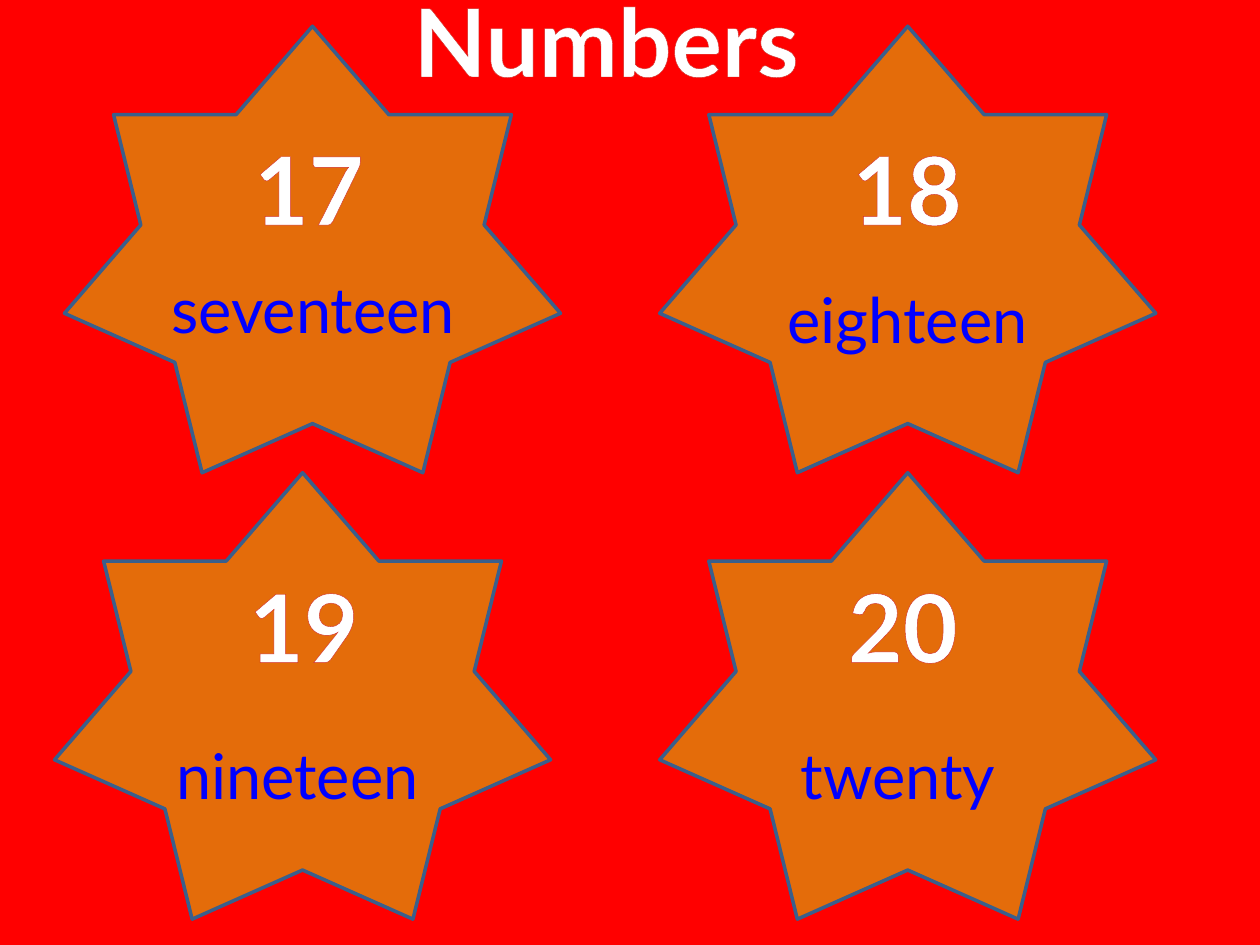
from dataclasses import dataclass

from lxml.etree import SubElement
from pptx import Presentation
from pptx.dml.color import RGBColor
from pptx.enum.shapes import MSO_SHAPE
from pptx.enum.text import MSO_ANCHOR, MSO_AUTO_SIZE, PP_ALIGN
from pptx.oxml.ns import qn
from pptx.shapes.autoshape import Shape
from pptx.slide import Slide
from pptx.util import Cm, Pt

RED = RGBColor(0xFF, 0x00, 0x00)
ORANGE = RGBColor(0xE4, 0x6C, 0x0A)
STEEL = RGBColor(0x3A, 0x5F, 0x8C)
WHITE = RGBColor(0xFF, 0xFF, 0xFF)
BLUE = RGBColor(0x00, 0x00, 0xFF)
BRICK = RGBColor(0xD0, 0x2F, 0x2A)

FONT = "Lato"
STAR_WIDTH, STAR_HEIGHT = 10, 9
HEADING_HEIGHT, WORD_HEIGHT = 2.57, 1.8


@dataclass(frozen=True)
class Area:
    """Position and size in centimetres."""
    left: float
    top: float
    width: float
    height: float

    def lengths(self) -> tuple[Cm, Cm, Cm, Cm]:
        return Cm(self.left), Cm(self.top), Cm(self.width), Cm(self.height)


@dataclass(frozen=True)
class NumberStar:
    left: float
    top: float
    figure: str
    figure_area: Area
    word: str
    word_area: Area


UPPER, LOWER = 0.53, 9.53
STARS = [
    NumberStar(1.3, UPPER, "17", Area(4.75, 2.51, 2.95, HEADING_HEIGHT),
               "seventeen", Area(2.11, 5.33, 8.41, WORD_HEIGHT)),
    NumberStar(13.3, UPPER, "18", Area(16.76, 2.51, 3.05, HEADING_HEIGHT),
               "eighteen", Area(14.5, 5.54, 7.59, WORD_HEIGHT)),
    NumberStar(1.1, LOWER, "19", Area(4.6, 11.33, 3.05, HEADING_HEIGHT),
               "nineteen", Area(2.49, 14.73, 7.01, WORD_HEIGHT)),
    NumberStar(13.3, LOWER, "20", Area(16.41, 11.33, 3.58, HEADING_HEIGHT),
               "twenty", Area(14.1, 14.73, 8, WORD_HEIGHT)),
]


def write_text(box: Shape, text: str, size: float, colour: RGBColor,
               bold: bool, wrap: bool) -> None:
    frame = box.text_frame
    frame.text = text
    frame.word_wrap = wrap
    frame.auto_size = MSO_AUTO_SIZE.SHAPE_TO_FIT_TEXT
    frame.vertical_anchor = MSO_ANCHOR.TOP
    para = frame.paragraphs[0]
    para.alignment = PP_ALIGN.CENTER
    font = para.runs[0].font
    font.name, font.size, font.bold = FONT, Pt(size), bold
    font.color.rgb = colour


def write_heading(box: Shape, text: str) -> None:
    """Large white text with a thin brick-red outline."""
    write_text(box, text, 54, WHITE, bold=True, wrap=False)
    span = box.text_frame.paragraphs[0].runs[0]
    properties = span.font._element
    outline = SubElement(properties, qn("a:ln"), w=str(Pt(1.93)))
    fill = SubElement(outline, qn("a:solidFill"))
    SubElement(fill, qn("a:srgbClr"), val=str(BRICK))
    properties.insert(0, outline)  # the outline comes before the fill


def draw_star(page: Slide, star: NumberStar) -> None:
    area = Area(star.left, star.top, STAR_WIDTH, STAR_HEIGHT)
    shape = page.shapes.add_shape(MSO_SHAPE.STAR_7_POINT, *area.lengths())
    shape.shadow.inherit = False
    shape.fill.solid()
    shape.fill.fore_color.rgb = ORANGE
    shape.line.color.rgb = STEEL
    shape.line.width = Pt(2)


def draw_labels(page: Slide, star: NumberStar) -> None:
    figure_box = page.shapes.add_textbox(*star.figure_area.lengths())
    write_heading(figure_box, star.figure)
    word_box = page.shapes.add_textbox(*star.word_area.lengths())
    write_text(word_box, star.word, 36, BLUE, bold=False, wrap=True)


def main() -> None:
    deck = Presentation()
    deck.slide_width, deck.slide_height = Cm(25.4), Cm(19.05)
    page = deck.slides.add_slide(deck.slide_layouts[5])
    page.background.fill.solid()
    page.background.fill.fore_color.rgb = RED

    # Title
    title = page.shapes.title
    area = Area(7.29, -0.48, 9.86, HEADING_HEIGHT)
    title.left, title.top, title.width, title.height = area.lengths()
    write_heading(title, "Numbers")

    # Stars, then their labels on top
    for star in STARS:
        draw_star(page, star)
    for star in STARS:
        draw_labels(page, star)

    deck.save("out.pptx")


if __name__ == "__main__":
    main()
